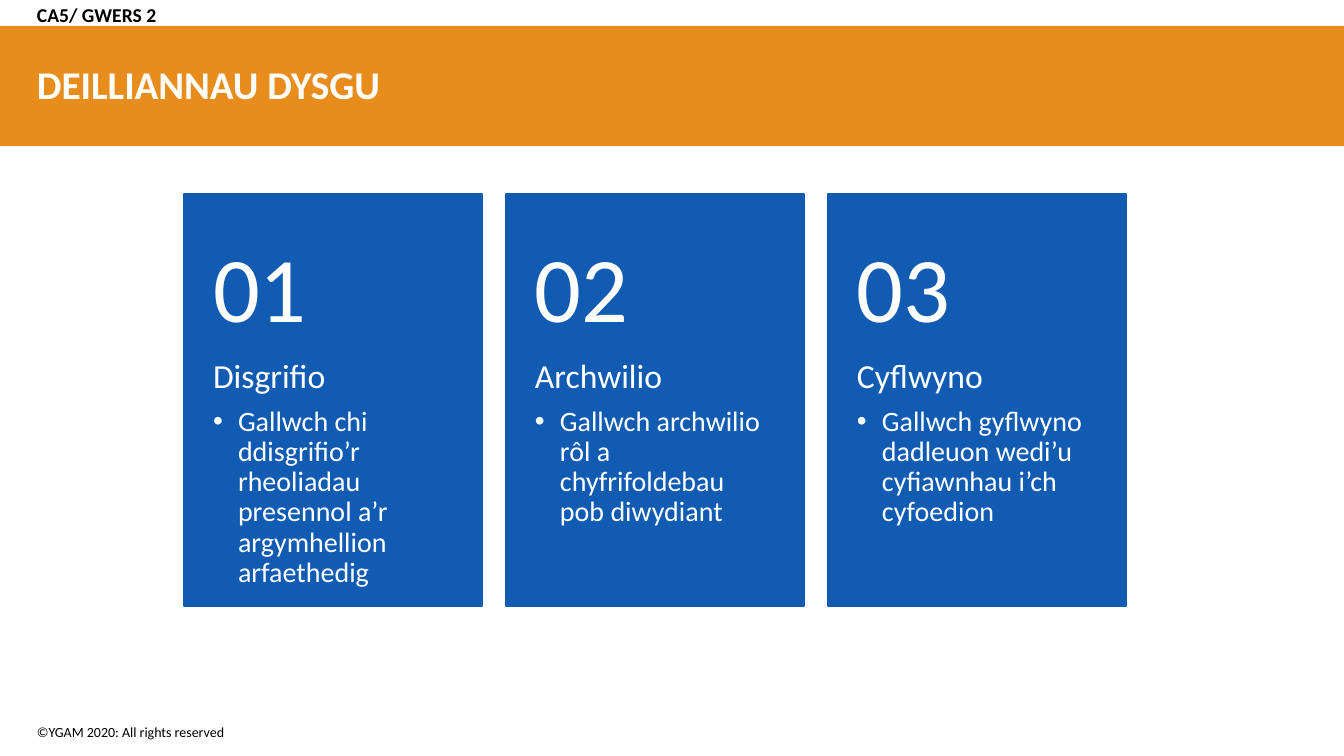
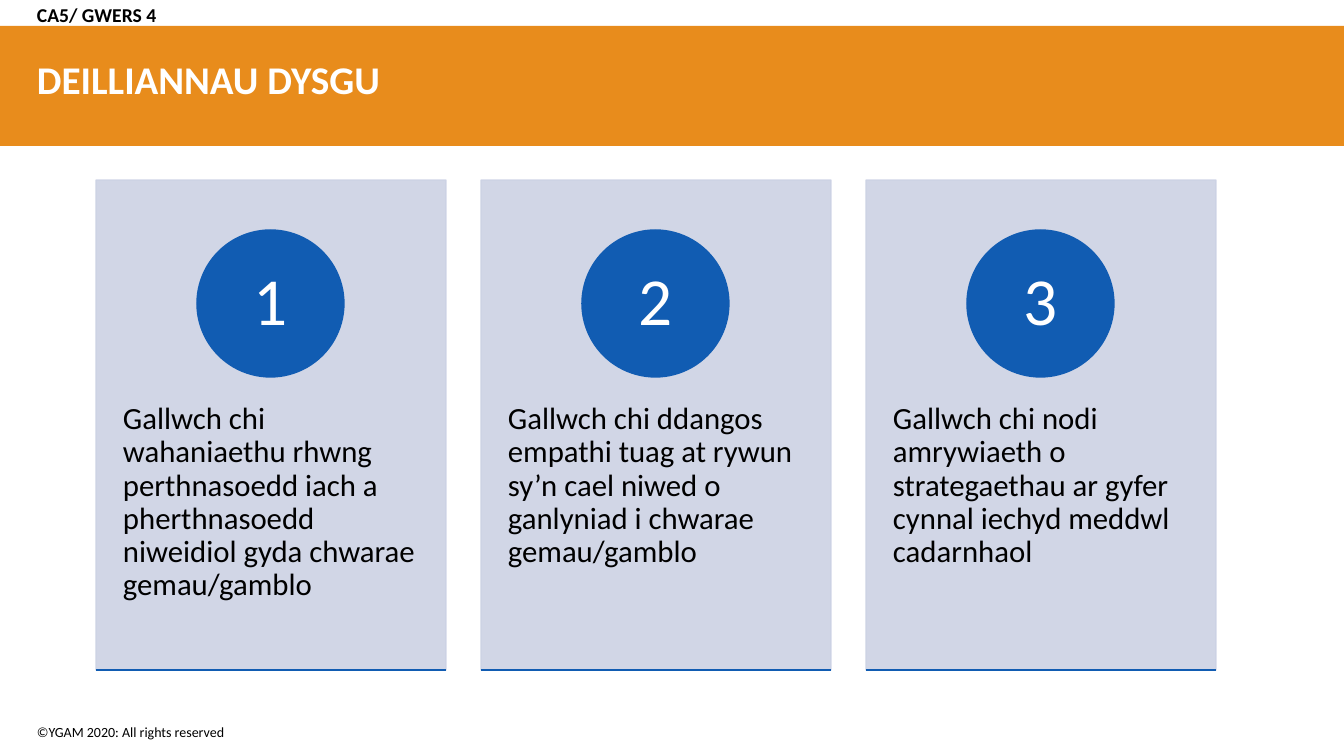
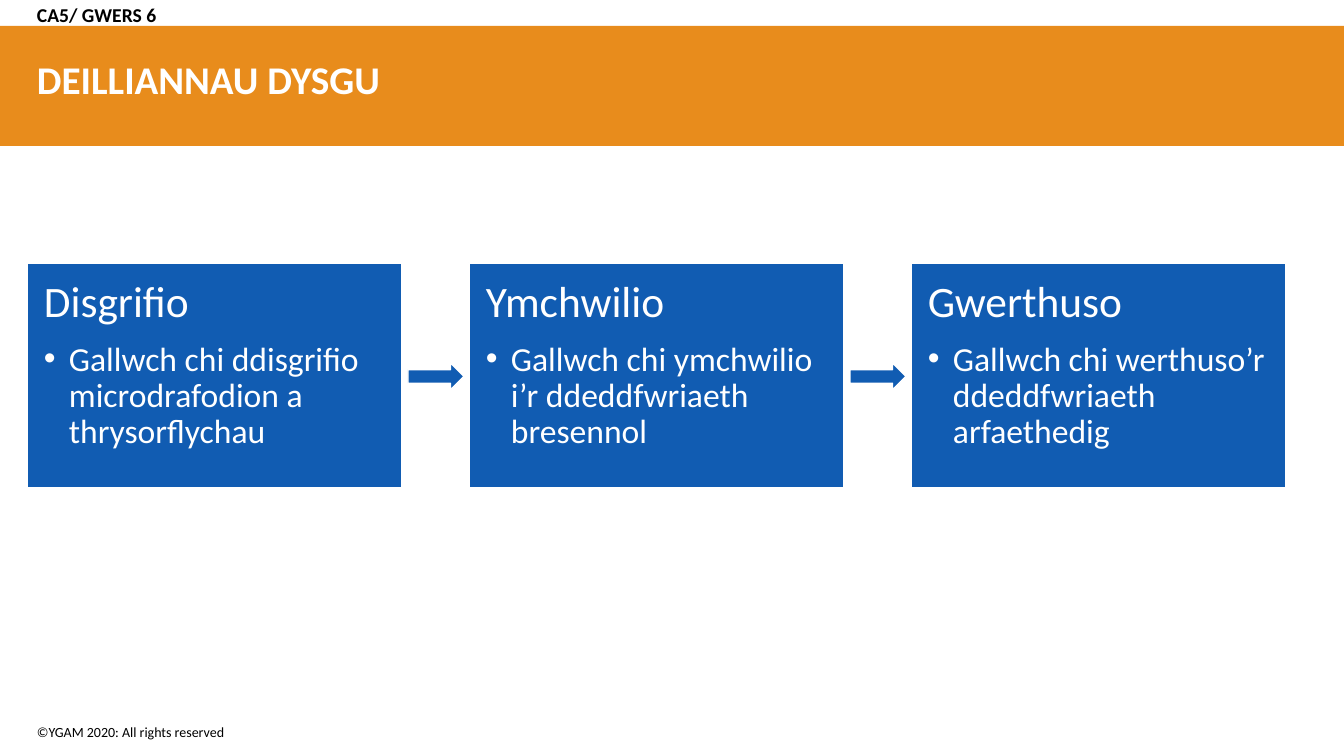
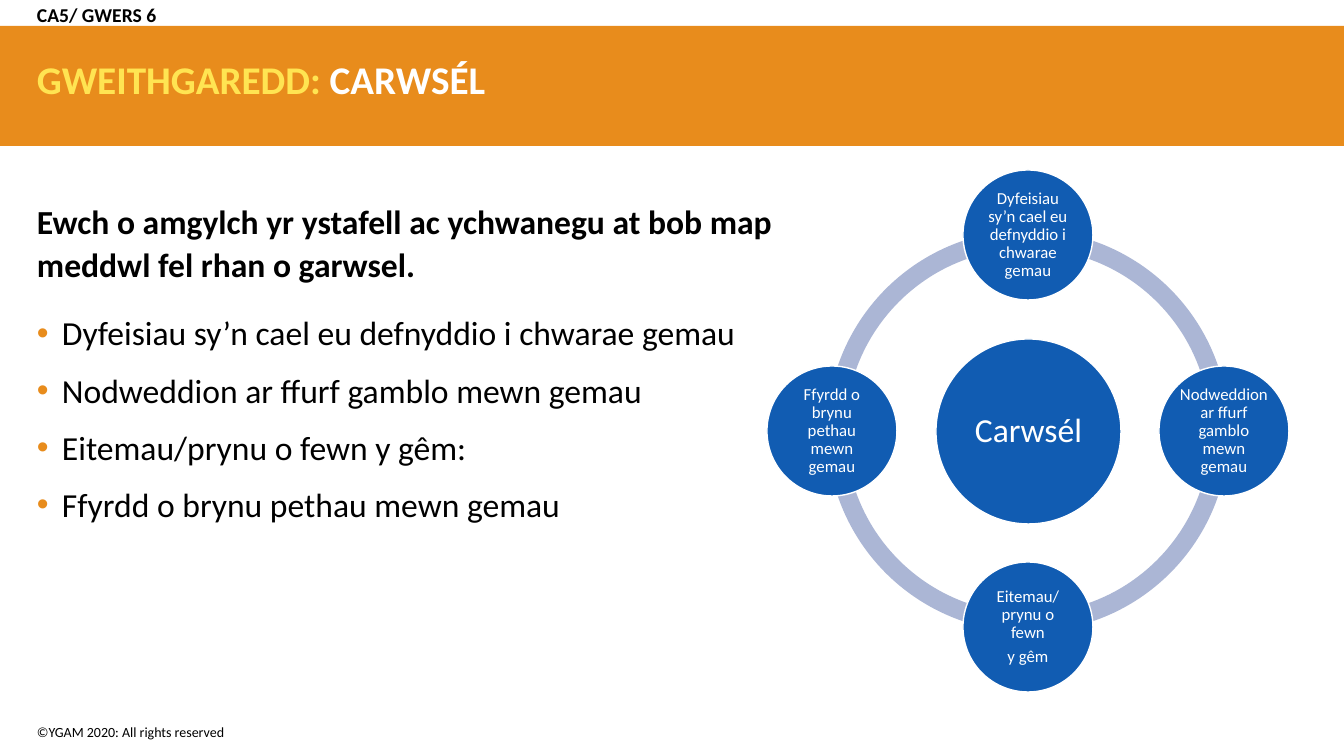
from lxml import etree
from pptx import Presentation
from pptx import util as u
from pptx.dml.color import RGBColor
from pptx.enum import shapes, text
from pptx.oxml.ns import qn

PX = 12192000 / 1344
FONT = "Calibri"
ORANGE = RGBColor(0xE8, 0x8C, 0x1C)
BLUE = RGBColor(0x11, 0x5C, 0xB2)
PALE = RGBColor(0xCC, 0xD2, 0xE4)
RING = RGBColor(0xAB, 0xB6, 0xD5)
YELLOW = RGBColor(0xFF, 0xE4, 0x52)
WHITE = RGBColor(0xFF, 0xFF, 0xFF)
BLACK = RGBColor(0, 0, 0)

RECT = shapes.MSO_SHAPE.RECTANGLE
OVAL = shapes.MSO_SHAPE.OVAL
MIDDLE = text.MSO_ANCHOR.MIDDLE
TOP = text.MSO_ANCHOR.TOP
LEFT = text.PP_ALIGN.LEFT
CENTER = text.PP_ALIGN.CENTER


def draw(slide, kind, box, fill=None, line=None):
    place = [round(value * PX) for value in box]
    if kind is None:
        return slide.shapes.add_textbox(*place)
    shape = slide.shapes.add_shape(kind, *place)
    shape.shadow.inherit = False
    shape.fill.solid()
    shape.fill.fore_color.rgb = fill
    if line is None:
        shape.line.fill.background()
    else:
        shape.line.color.rgb = line
        shape.line.width = u.Pt(1)
    return shape


def write(shape, paragraphs, anchor=TOP, insets=(10, 5, 10, 5)):
    frame = shape.text_frame
    settings = {"word_wrap": True, "auto_size": text.MSO_AUTO_SIZE.NONE, "vertical_anchor": anchor}
    for side, inset in zip(("left", "top", "right", "bottom"), insets):
        settings[f"margin_{side}"] = round(inset * PX)
    for key, value in settings.items():
        setattr(frame, key, value)
    for index, (runs, style) in enumerate(paragraphs):
        paragraph = frame.add_paragraph() if index else frame.paragraphs[0]
        if "bullet" in style:
            properties = paragraph._p.get_or_add_pPr()
            properties.set("marL", str(round(25 * PX)))
            properties.set("indent", str(round(-25 * PX)))
            colour = etree.SubElement(properties, qn("a:buClr"))
            etree.SubElement(colour, qn("a:srgbClr"), val=str(style["bullet"]))
            etree.SubElement(properties, qn("a:buFont"), typeface="Arial")
            etree.SubElement(properties, qn("a:buChar"), char="•")
        layout_values = {
            "alignment": style.get("align", LEFT),
            "line_spacing": style.get("spacing", 0.9),
            "space_before": u.Pt(style.get("before", 0)),
            "space_after": u.Pt(style.get("after", 0)),
        }
        for key, value in layout_values.items():
            setattr(paragraph, key, value)
        for words, colour in [(runs, style["color"])] if isinstance(runs, str) else runs:
            run = paragraph.add_run()
            run.text = words
            font_values = {"name": FONT, "size": u.Pt(style["size"]), "bold": style.get("bold", False)}
            for key, value in font_values.items():
                setattr(run.font, key, value)
            run.font.color.rgb = colour


TITLE = {"size": 28, "color": WHITE, "bold": True}
LESSON = {"size": 14, "color": BLACK, "bold": True}
FOOTER = {"size": 10, "color": BLACK, "spacing": 1.0}

prs = Presentation()
prs.slide_width, prs.slide_height = round(1344 * PX), round(756 * PX)
layout = prs.slide_layouts[5]

pages = [
    ("CA5/ GWERS 2", "DEILLIANNAU DYSGU", 27),
    ("CA5/ GWERS 4", "DEILLIANNAU DYSGU", 22),
    ("CA5/ GWERS 6", "DEILLIANNAU DYSGU", 22),
    ("CA5/ GWERS 6", [("GWEITHGAREDD: ", YELLOW), ("CARWSÉL", WHITE)], 22),
]
slides = []
for lesson, heading, top in pages:
    slide = prs.slides.add_slide(layout)
    title = slide.shapes.title
    for key, value in {"left": 27, "top": top, "width": 1286, "height": 120}.items():
        setattr(title, key, round(value * PX))
    write(title, [(heading, TITLE)], MIDDLE)
    write(draw(slide, None, (27, -6, 591, 44)), [(lesson, LESSON)], MIDDLE)
    slides.append(slide)
outcomes, relationships, legislation, carousel = slides

band = draw(outcomes, RECT, (0, 26, 1344, 120), ORANGE)
footer = draw(outcomes, None, (27, 719, 569, 27))
write(footer, [("©YGAM 2020: All rights reserved", FOOTER)])
for shared in (band, footer):
    layout.shapes.element.append(shared.element)

NUMBER = {"size": 66, "color": WHITE}
VERB = {"size": 24, "color": WHITE, "after": 8.4}
DETAIL = {"size": 20, "color": WHITE, "after": 3, "bullet": WHITE}
outcome_cards = [
    ("Disgrifio", "Gallwch chi ddisgrifio’r rheoliadau presennol a’r argymhellion arfaethedig"),
    ("Archwilio", "Gallwch archwilio rôl a chyfrifoldebau pob diwydiant"),
    ("Cyflwyno", "Gallwch gyflwyno dadleuon wedi’u cyfiawnhau i’ch cyfoedion"),
]
for index, (verb, detail) in enumerate(outcome_cards):
    x = 184 + 322 * index
    draw(outcomes, RECT, (x, 194, 298, 412), BLUE, BLUE)
    write(draw(outcomes, None, (x, 359, 298, 247)), [(verb, VERB), (detail, DETAIL)], TOP, (29, 0, 29, 36))
    write(draw(outcomes, None, (x, 221, 298, 143)), [(f"{index + 1:02}", NUMBER)], MIDDLE, (29, 18, 29, 18))

DIGIT = {"size": 48, "color": WHITE, "align": CENTER}
STATEMENT = {"size": 22, "color": BLACK}
statements = [
    "Gallwch chi wahaniaethu rhwng perthnasoedd iach a pherthnasoedd niweidiol gyda chwarae gemau/gamblo",
    "Gallwch chi ddangos empathi tuag at rywun sy’n cael niwed o ganlyniad i chwarae gemau/gamblo",
    "Gallwch chi nodi amrywiaeth o strategaethau ar gyfer cynnal iechyd meddwl cadarnhaol",
]
for index, statement in enumerate(statements):
    x = 96 + 385 * index
    panel = draw(relationships, RECT, (x, 180, 350, 490), PALE, PALE)
    for colour in panel.element.spPr.iter(qn("a:srgbClr")):
        etree.SubElement(colour, qn("a:alpha"), val="90000")
    write(draw(relationships, None, (x, 367, 350, 294)), [(statement, STATEMENT)], TOP, (27, 36, 27, 36))
    disc = draw(relationships, OVAL, (x + 101, 230, 147, 147), BLUE, BLUE)
    write(disc, [(str(index + 1), DIGIT)], MIDDLE, (11, 1, 11, 1))
    ends = [round(value * PX) for value in (x, 670, x + 350, 670)]
    rule = relationships.shapes.add_connector(shapes.MSO_CONNECTOR.STRAIGHT, *ends)
    rule.line.color.rgb = BLUE
    rule.line.width = u.Pt(1)
    etree.SubElement(rule.element.spPr, qn("a:effectLst"))

STEP = {"size": 31, "color": WHITE, "after": 10.85}
STEP_DETAIL = {"size": 24, "color": WHITE, "after": 3.6, "bullet": WHITE}
steps = [
    ("Disgrifio", "Gallwch chi ddisgrifio microdrafodion a thrysorflychau"),
    ("Ymchwilio", "Gallwch chi ymchwilio i’r ddeddfwriaeth bresennol"),
    ("Gwerthuso", "Gallwch chi werthuso’r ddeddfwriaeth arfaethedig"),
]
for index, (step, detail) in enumerate(steps):
    x = 27 + 442 * index
    card = draw(legislation, RECT, (x, 263, 375, 225), BLUE, WHITE)
    write(card, [(step, STEP), (detail, STEP_DETAIL)], TOP, (17, 17, 17, 17))
    if index < len(steps) - 1:
        draw(legislation, shapes.MSO_SHAPE.RIGHT_ARROW, (x + 381, 363, 56, 27), BLUE, WHITE)

INSTRUCTION = {"size": 24, "color": BLACK, "bold": True, "spacing": 1.07, "after": 8}
TOPIC = {"size": 24, "color": BLACK, "spacing": 1.07, "before": 10, "bullet": ORANGE}
topics = [
    "Dyfeisiau sy’n cael eu defnyddio i chwarae gemau",
    "Nodweddion ar ffurf gamblo mewn gemau",
    "Eitemau/prynu o fewn y gêm:",
    "Ffyrdd o brynu pethau mewn gemau",
]
instruction = "Ewch o amgylch yr ystafell ac ychwanegu at bob map meddwl fel rhan o garwsel."
task = draw(carousel, None, (27, 193, 789, 251))
write(task, [(instruction, INSTRUCTION)] + [(topic, TOPIC) for topic in topics])

HUB = {"size": 24, "color": WHITE, "align": CENTER}
NODE = {"size": 12, "color": WHITE, "align": CENTER, "after": 4.2}
hub_x, hub_y, orbit = 1028, 431, 196
for start in (108, 54, 0, 162):
    arc = draw(carousel, shapes.MSO_SHAPE.BLOCK_ARC, (hub_x - 201, hub_y - 201, 402, 402), RING)
    for index, value in enumerate((start, (start + 54) % 216, 0.046)):
        arc.adjustments[index] = value
hub = draw(carousel, OVAL, (hub_x - 92, hub_y - 92, 185, 185), BLUE, WHITE)
write(hub, [("Carwsél", HUB)], MIDDLE, (3, 3, 3, 3))
nodes = [
    (0, -1, [topics[0]]),
    (1, 0, [topics[1]]),
    (0, 1, ["Eitemau/prynu o fewn", "y gêm"]),
    (-1, 0, [topics[3]]),
]
for across, down, lines in nodes:
    box = (hub_x + across * orbit - 65, hub_y + down * orbit - 65, 130, 130)
    write(draw(carousel, OVAL, box, BLUE, WHITE), [(line, NODE) for line in lines], MIDDLE, (1, 1, 1, 1))

prs.save("out.pptx")
